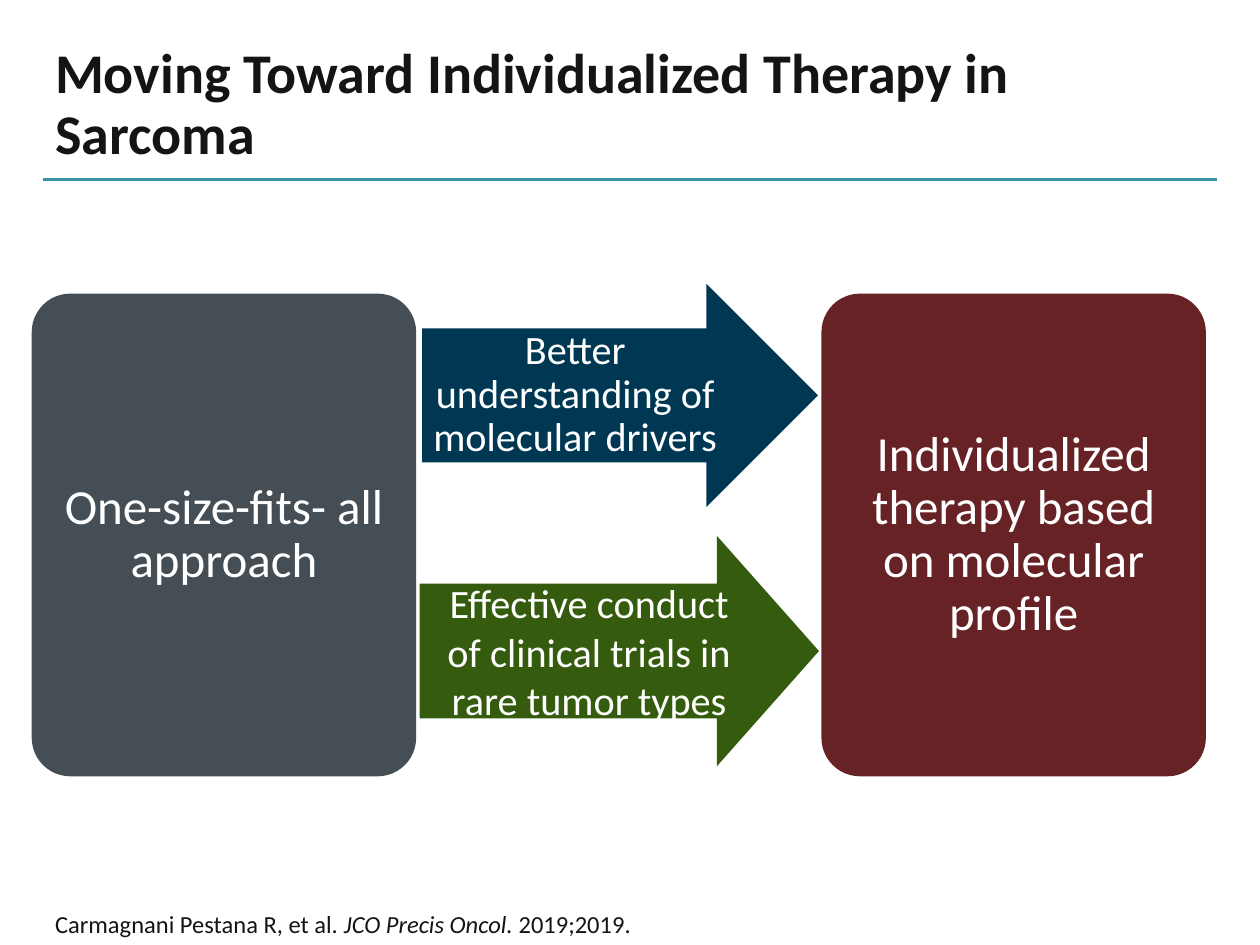
import pptx
import pptx.dml.color
import pptx.enum.shapes
import pptx.enum.text
import pptx.oxml.ns
import pptx.util
from lxml import etree

Cm = pptx.util.Cm
Pt = pptx.util.Pt
SHAPES = pptx.enum.shapes.MSO_SHAPE
ANCHORS = pptx.enum.text.MSO_ANCHOR
ALIGNMENTS = pptx.enum.text.PP_ALIGN

FONT = "Calibri"
COLORS = {
    "ink": "141414",
    "white": "FFFFFF",
    "rule": "3894A2",
    "slate": "444E54",
    "navy": "003854",
    "maroon": "662225",
    "green": "345B0E",
}


def rgb(name):
    """Return the named colour."""
    return pptx.dml.color.RGBColor.from_string(COLORS[name])


def write(shape, runs, size, color, anchor, alignment, spacing, margins):
    """Fill a shape with one paragraph of (text, bold, italic) runs."""
    frame = shape.text_frame
    frame.word_wrap = True
    frame.vertical_anchor = anchor
    left, top, right, bottom = margins
    frame.margin_left, frame.margin_top = Cm(left), Cm(top)
    frame.margin_right, frame.margin_bottom = Cm(right), Cm(bottom)
    paragraph = frame.paragraphs[0]
    paragraph.alignment = alignment
    paragraph.line_spacing = spacing
    for text, bold, italic in runs:
        run = paragraph.add_run()
        run.text = text
        run.font.name = FONT
        run.font.size = Pt(size)
        run.font.bold = bold
        run.font.italic = italic
        run.font.color.rgb = rgb(color)


def add_caption(slide, box, runs, size):
    """Add dark left-aligned text resting on the bottom of its box."""
    shape = slide.shapes.add_textbox(*map(Cm, box))
    write(shape, runs, size, "ink", ANCHORS.BOTTOM, ALIGNMENTS.LEFT, 0.9,
          (0.25, 0.13, 0.25, 0.13))


def add_header(slide, box):
    """Add the title and the rule just below it."""
    left, top, width, height = box
    add_caption(slide, box, [("Moving Toward Individualized Therapy in Sarcoma", True, False)], 32)
    rule_y = top + height + 0.13
    rule = slide.shapes.add_connector(
        pptx.enum.shapes.MSO_CONNECTOR.STRAIGHT,
        Cm(left), Cm(rule_y), Cm(left + width), Cm(rule_y))
    rule.line.color.rgb = rgb("rule")
    rule.line.width = Pt(1.75)
    etree.SubElement(rule._element.spPr, pptx.oxml.ns.qn("a:effectLst"))


def add_block(slide, kind, box, adjustments, fill, text, size, spacing, margins):
    """Add a filled shape with centred white text."""
    shape = slide.shapes.add_shape(kind, *map(Cm, box))
    for index, value in enumerate(adjustments):
        shape.adjustments[index] = value
    shape.shadow.inherit = False
    shape.fill.solid()
    shape.fill.fore_color.rgb = rgb(fill)
    shape.line.fill.background()
    write(shape, [(text, False, False)], size, "white", ANCHORS.MIDDLE,
          ALIGNMENTS.CENTER, spacing, margins)


def add_process(slide, box):
    """Add the two approaches and the two arrows that lead between them."""
    left, top, width, height = box
    card_width, card_height = 7.75, 9.73
    cards = [
        (0, "slate", "One-size-fits- all approach"),
        (width - card_width, "maroon", "Individualized therapy based on molecular profile"),
    ]
    for offset, fill, text in cards:
        add_block(slide, SHAPES.ROUNDED_RECTANGLE,
                  (left + offset, top + height - card_height, card_width, card_height),
                  (0.1,), fill, text, 28, 0.9, (0.3,) * 4)
    arrows = [
        ((7.87, 0, 7.98, 4.5), (0.6, 0.5), "navy",
         "Better understanding of molecular drivers", 0.9, (0, 0, 0.45, 0)),
        ((7.82, 5.08, 8.05, 4.65), (0.585, 0.443), "green",
         "Effective conduct of clinical trials in rare tumor types", 1.0,
         (0.25, 0.13, 0.25, 0.13)),
    ]
    for (x, y, arrow_width, arrow_height), adjustments, fill, text, spacing, margins in arrows:
        add_block(slide, SHAPES.RIGHT_ARROW, (left + x, top + y, arrow_width, arrow_height),
                  adjustments, fill, text, 23, spacing, margins)


def add_citation(slide, box):
    """Add the source reference at the foot of the slide."""
    add_caption(slide, box, [
        ("Carmagnani Pestana R, et al. ", False, False),
        ("JCO Precis Oncol. ", False, True),
        ("2019;2019.", False, False),
    ], 14)


def main():
    """Build the slide and save it."""
    presentation = pptx.Presentation()
    presentation.slide_width, presentation.slide_height = Cm(25.4), Cm(19.05)
    slide = presentation.slides.add_slide(presentation.slide_layouts[6])
    add_header(slide, (0.86, 1.07, 23.67, 2.41))
    add_process(slide, (0.64, 5.72, 23.67, 9.93))
    add_citation(slide, (0.86, 17.12, 23.67, 1.93))
    presentation.save("out.pptx")


if __name__ == "__main__":
    main()
